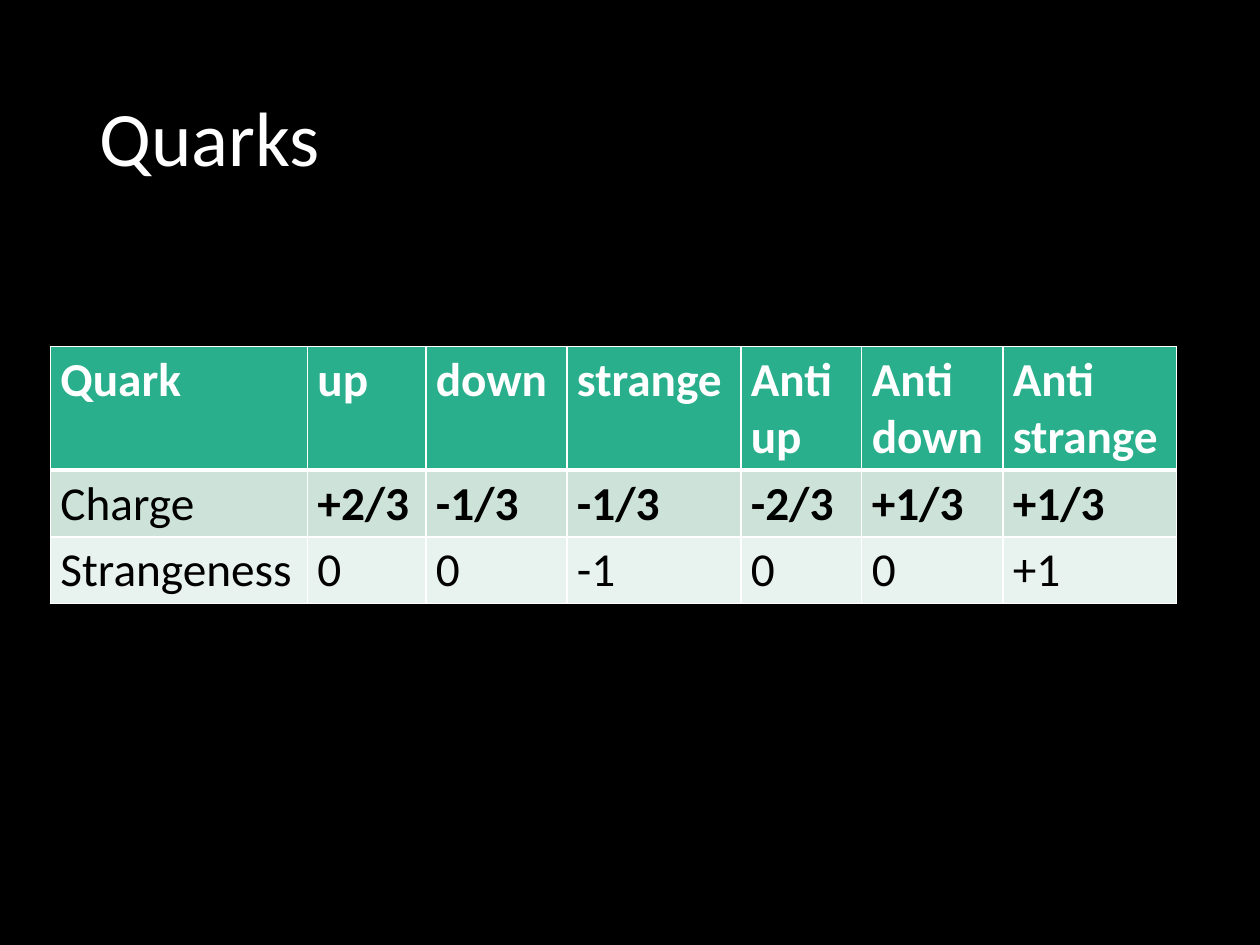
from dataclasses import dataclass

from lxml.etree import SubElement
from pptx import Presentation
from pptx.dml.color import RGBColor
from pptx.enum.text import MSO_ANCHOR
from pptx.oxml.ns import qn
from pptx.util import Inches, Pt

WHITE = RGBColor(0xFF, 0xFF, 0xFF)
BLACK = RGBColor(0x00, 0x00, 0x00)
GREEN = RGBColor(0x29, 0xAF, 0x8C)
MINT = RGBColor(0xCD, 0xE3, 0xDA)
PALE_MINT = RGBColor(0xE8, 0xF2, 0xEE)

FONT = "Calibri"
TABLE_LEFT, TABLE_TOP = 0.4, 2.75
COLUMN_WIDTHS = (2.04, 0.94, 1.12, 1.38, 0.96, 1.12, 1.38)


@dataclass(frozen=True)
class QuarkRow:
    texts: tuple[str, ...]
    height: float
    fill: RGBColor
    color: RGBColor
    bold_label: bool
    bold_values: bool
    bottom_border: float = 1


ROWS = (
    QuarkRow(("Quark", "up", "down", "strange", "Anti\nup", "Anti down", "Anti strange"),
             0.97, GREEN, WHITE, True, True, bottom_border=3),
    QuarkRow(("Charge", "+2/3", "-1/3", "-1/3", "-2/3", "+1/3", "+1/3"),
             0.52, MINT, BLACK, False, True),
    QuarkRow(("Strangeness", "0", "0", "-1", "0", "0", "+1"),
             0.52, PALE_MINT, BLACK, False, False),
)


def add_text(paragraph, text: str, size: float, color: RGBColor, bold: bool = False) -> None:
    """Add one run per line of text, with line breaks between them."""
    for index, line in enumerate(text.split("\n")):
        if index:
            paragraph.add_line_break()
        run = paragraph.add_run()
        run.text = line
        run.font.name = FONT
        run.font.size = Pt(size)
        run.font.bold = bold
        run.font.color.rgb = color


def add_border(cell, side: str, width: float) -> None:
    """Draw a white border; side is L, R, T or B."""
    properties = cell._tc.get_or_add_tcPr()
    line = SubElement(properties, qn(f"a:ln{side}"), w=str(Pt(width)))
    fill = SubElement(line, qn("a:solidFill"))
    SubElement(fill, qn("a:srgbClr"), val=str(WHITE))


def fill_cell(cell, text: str, row: QuarkRow, bold: bool) -> None:
    cell.margin_left = cell.margin_right = Inches(0.08)
    cell.margin_top = cell.margin_bottom = Inches(0.04)
    for side in "LRT":
        add_border(cell, side, 1)
    add_border(cell, "B", row.bottom_border)
    cell.fill.solid()
    cell.fill.fore_color.rgb = row.fill
    add_text(cell.text_frame.paragraphs[0], text, 27, row.color, bold)


def add_title(slide, text: str) -> None:
    box = slide.shapes.add_textbox(Inches(0.69), Inches(0.4), Inches(8.62), Inches(1.45))
    frame = box.text_frame
    frame.word_wrap = True
    frame.vertical_anchor = MSO_ANCHOR.MIDDLE
    paragraph = frame.paragraphs[0]
    paragraph.line_spacing = 0.9
    add_text(paragraph, text, 44, WHITE)


def add_quark_table(slide) -> None:
    table = slide.shapes.add_table(
        len(ROWS), len(COLUMN_WIDTHS), Inches(TABLE_LEFT), Inches(TABLE_TOP),
        Inches(sum(COLUMN_WIDTHS)), Inches(sum(row.height for row in ROWS)),
    ).table
    for column, width in zip(table.columns, COLUMN_WIDTHS):
        column.width = Inches(width)
    for row_index, row in enumerate(ROWS):
        table.rows[row_index].height = Inches(row.height)
        for column_index, text in enumerate(row.texts):
            bold = row.bold_values if column_index else row.bold_label
            fill_cell(table.cell(row_index, column_index), text, row, bold)


def main() -> None:
    presentation = Presentation()
    presentation.slide_width, presentation.slide_height = Inches(10), Inches(7.5)
    slide = presentation.slides.add_slide(presentation.slide_layouts[6])
    slide.background.fill.solid()
    slide.background.fill.fore_color.rgb = BLACK
    add_title(slide, "Quarks")
    add_quark_table(slide)
    presentation.save("out.pptx")


if __name__ == "__main__":
    main()
